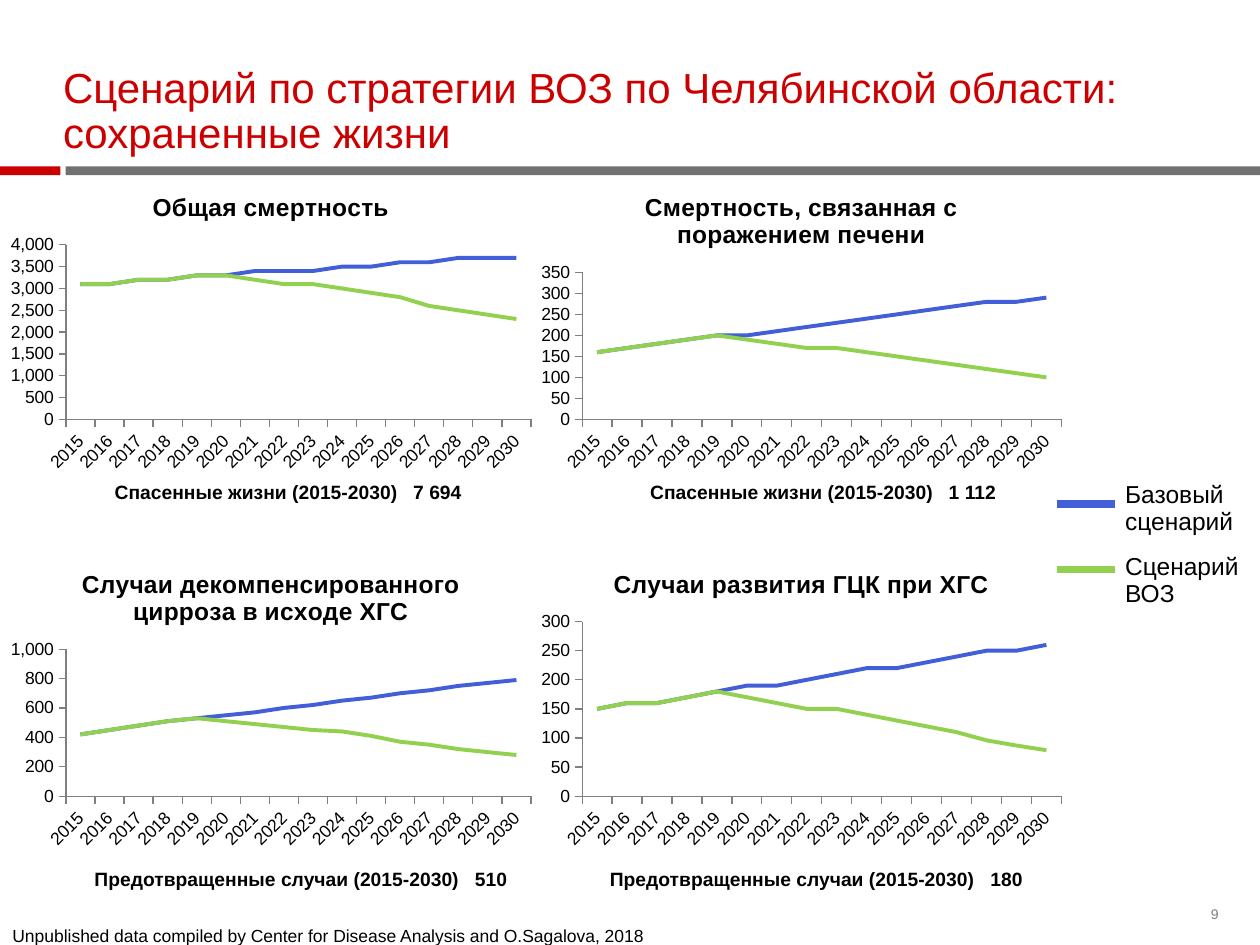
from lxml import etree
from pptx import Presentation
from pptx.chart.data import CategoryChartData
from pptx.dml.color import RGBColor
from pptx.enum.chart import XL_CHART_TYPE as ChartType, XL_TICK_MARK as Tick
from pptx.enum.shapes import MSO_CONNECTOR as Connector, MSO_SHAPE as Shape
from pptx.enum.text import MSO_ANCHOR as Anchor, PP_ALIGN as Align
from pptx.oxml.ns import qn
from pptx.util import Inches, Pt

RED = RGBColor(0xCC, 0x00, 0x00)
GRAY = RGBColor(0x71, 0x71, 0x71)
LIGHT_GRAY = RGBColor(0x80, 0x80, 0x80)
BLACK = RGBColor(0x00, 0x00, 0x00)
BLUE = RGBColor(0x42, 0x5F, 0xD8)
GREEN = RGBColor(0x92, 0xD0, 0x50)

FONT = "Arial"
YEARS = [str(year) for year in range(2015, 2031)]
COLUMNS, ROWS = (0, 4.21), (1.38, 4.37)
CHART_SIZE = (4.3, 2.42)
AUTO_ROTATION = "-60000000"

# (column, row), title, axis maximum, axis step, baseline values, WHO values
CHARTS = [
    ((0, 0), "Общая смертность", 4000, 500,
     [3100, 3100, 3200, 3200, 3300, 3300, 3400, 3400,
      3400, 3500, 3500, 3600, 3600, 3700, 3700, 3700],
     [3100, 3100, 3200, 3200, 3300, 3300, 3200, 3100,
      3100, 3000, 2900, 2800, 2600, 2500, 2400, 2300]),
    ((1, 0), "Смертность, связанная с поражением печени", 350, 50,
     [160, 170, 180, 190, 200, 200, 210, 220, 230, 240, 250, 260, 270, 280, 280, 290],
     [160, 170, 180, 190, 200, 190, 180, 170, 170, 160, 150, 140, 130, 120, 110, 100]),
    ((0, 1), "Случаи декомпенсированного цирроза в исходе ХГС", 1000, 200,
     [420, 450, 480, 510, 530, 550, 570, 600, 620, 650, 670, 700, 720, 750, 770, 790],
     [420, 450, 480, 510, 530, 510, 490, 470, 450, 440, 410, 370, 350, 320, 300, 280]),
    ((1, 1), "Случаи развития ГЦК при ХГС", 300, 50,
     [150, 160, 160, 170, 180, 190, 190, 200, 210, 220, 220, 230, 240, 250, 250, 260],
     [150, 160, 160, 170, 180, 170, 160, 150, 150, 140, 130, 120, 110, 96, 87, 79]),
]

# left, top, label, tab position of the number, number
LIVES, CASES = "Спасенные жизни (2015-2030)", "Предотвращенные случаи (2015-2030)"
RESULTS = [
    (0.91, 3.83, LIVES, 2.37, "7 694"),
    (5.16, 3.83, LIVES, 2.37, "1 112"),
    (0.75, 6.9, CASES, 3.02, "510"),
    (4.84, 6.9, CASES, 3.02, "180"),
]

# line height, text top, label, colour
LEGEND = [
    (4, 3.83, "Базовый сценарий", BLUE),
    (4.52, 4.4, "Сценарий ВОЗ", GREEN),
]


def style_font(font, size, color=BLACK, bold=False):
    for name, value in {"name": FONT, "size": Pt(size), "bold": bold}.items():
        setattr(font, name, value)
    font.color.rgb = color


def fill_frame(frame, text, size, color=BLACK, bold=False, spacing=0.9, inset=(0, 0), tab=None):
    side, edge = (Inches(value) for value in inset)
    settings = {"word_wrap": True, "margin_left": side, "margin_right": side,
                "margin_top": edge, "margin_bottom": edge}
    for name, value in settings.items():
        setattr(frame, name, value)
    para = frame.paragraphs[0]
    if tab:
        stops = etree.SubElement(para._p.get_or_add_pPr(), qn("a:tabLst"))
        etree.SubElement(stops, qn("a:tab"), pos=str(Inches(tab)), algn="l")
    para.alignment = Align.LEFT
    para.line_spacing = spacing
    span = para.add_run()
    span.text = text
    style_font(span.font, size, color, bold)


def add_text(shapes, place, text, size, **style):
    box = shapes.add_textbox(*map(Inches, place))
    fill_frame(box.text_frame, text, size, **style)


def add_bar(shapes, place, color):
    bar = shapes.add_shape(Shape.RECTANGLE, *map(Inches, place))
    bar.shadow.inherit = False
    bar.fill.solid()
    bar.fill.fore_color.rgb = color
    bar.line.fill.background()


def add_title(slide, text):
    title = slide.shapes.title
    place = {"left": 0.5, "top": 0.51, "width": 9, "height": 0.74}
    for name, value in place.items():
        setattr(title, name, Inches(value))
    fill_frame(title.text_frame, text, 24, RED)
    title.text_frame.vertical_anchor = Anchor.BOTTOM


def add_legend(shapes):
    group = shapes.add_group_shape().shapes
    for height, top, label, color in LEGEND:
        line = group.add_connector(Connector.STRAIGHT, *map(Inches, (8.39, height, 8.85, height)))
        line.line.color.rgb = color
        line.line.width = Pt(4.5)
        etree.SubElement(line._element.spPr, qn("a:effectLst"))
        add_text(group, (8.93, top, 0.94, 0.42), label, 14)


def style_axis(axis):
    settings = {"has_major_gridlines": False, "major_tick_mark": Tick.OUTSIDE,
                "minor_tick_mark": Tick.NONE}
    for name, value in settings.items():
        setattr(axis, name, value)
    axis.format.line.color.rgb = LIGHT_GRAY
    style_font(axis.tick_labels.font, 10)


def add_line_chart(shapes, cell, title, maximum, step, baseline, strategy):
    data = CategoryChartData(number_format="#,##0")
    data.categories = YEARS
    for (_, _, name, _), values in zip(LEGEND, (baseline, strategy)):
        data.add_series(name, values)
    place = (COLUMNS[cell[0]], ROWS[cell[1]], *CHART_SIZE)
    chart = shapes.add_chart(ChartType.LINE, *map(Inches, place), data).chart
    style_font(chart.font, 18)
    chart.has_legend = False

    # Title
    chart.has_title = True
    chart.chart_title.include_in_layout = False
    span = chart.chart_title.text_frame.paragraphs[0].add_run()
    span.text = title
    style_font(span.font, 14, bold=True)

    # Axes
    style_axis(chart.category_axis)
    labels = chart.category_axis._element.find(qn("c:txPr")).find(qn("a:bodyPr"))
    labels.set("rot", AUTO_ROTATION)
    style_axis(chart.value_axis)
    scale = {"minimum_scale": 0, "maximum_scale": maximum, "major_unit": step}
    for name, value in scale.items():
        setattr(chart.value_axis, name, value)
    chart.value_axis.tick_labels.number_format = "#,##0"
    chart.value_axis.tick_labels.number_format_is_linked = False

    # Series
    plot = chart.plots[0]
    plot.vary_by_categories = False
    for series, color in zip(plot.series, (BLUE, GREEN)):
        series.smooth = False
        series.format.line.color.rgb = color
        series.format.line.width = Pt(2.25)


def main():
    deck = Presentation()
    deck.slide_width, deck.slide_height = Inches(10), Inches(7.5)
    slide = deck.slides.add_slide(deck.slide_layouts[5])
    shapes = slide.shapes

    # Header and page number
    add_bar(shapes, (0.52, 1.32, 9.48, 0.07), GRAY)
    add_bar(shapes, (0, 1.32, 0.48, 0.07), RED)
    add_text(shapes, (9.61, 7.2, 0.35, 0.27), "9", 8, color=LIGHT_GRAY)
    add_title(slide, "Сценарий по стратегии ВОЗ по Челябинской области: сохраненные жизни")

    # Charts with their results and shared legend
    add_legend(shapes)
    for left, top, label, tab, number in RESULTS:
        add_text(shapes, (left, top, 3.4, 0.17), f"{label}\t{number}", 11, bold=True, tab=tab)
    for chart in CHARTS:
        add_line_chart(shapes, *chart)

    # Source note
    add_text(shapes, (0, 7.29, 7.68, 0.4),
             "Unpublished data compiled by Center for Disease Analysis and O.Sagalova, 2018",
             10, spacing=1.0, inset=(0.1, 0.05))
    deck.save("out.pptx")


if __name__ == "__main__":
    main()
